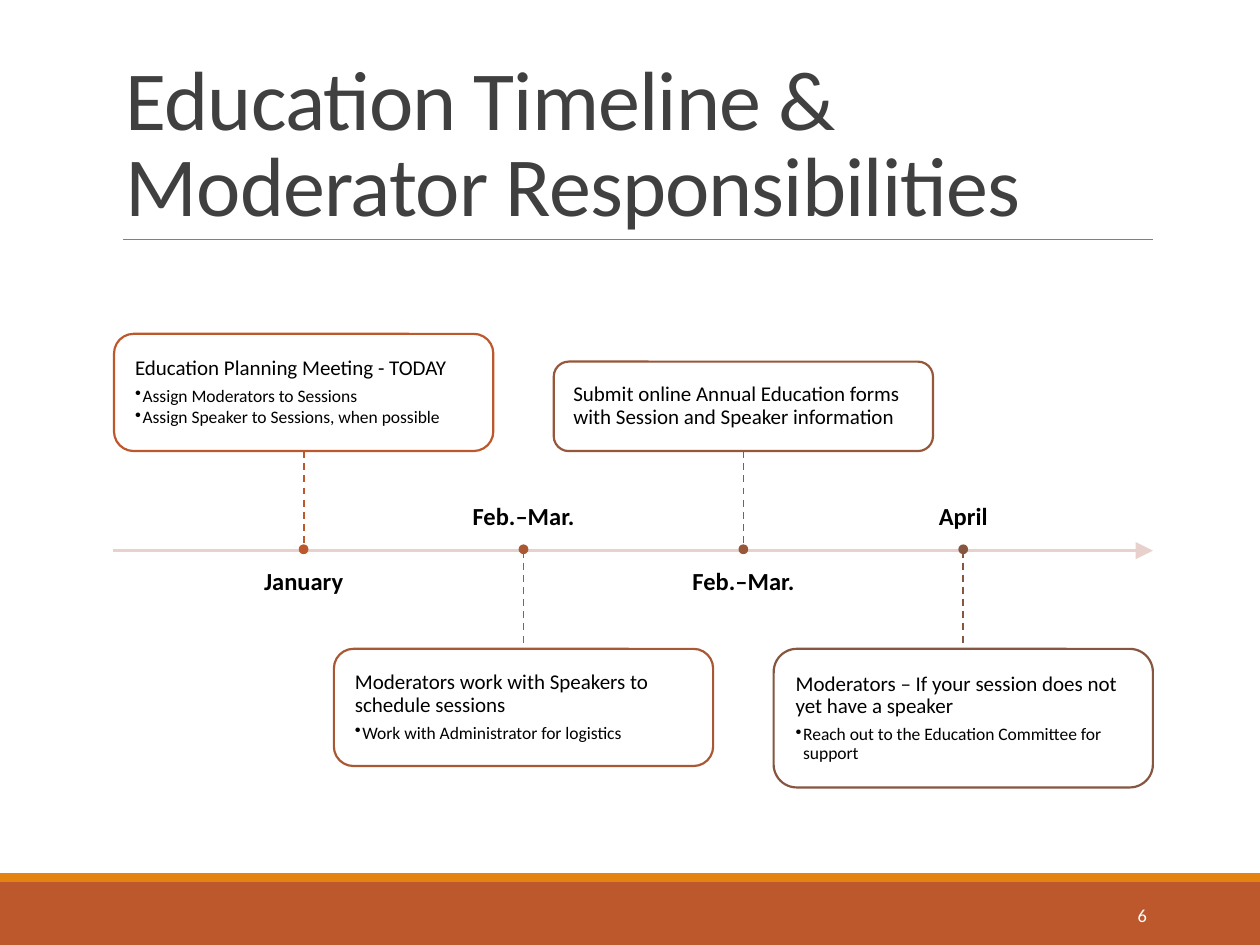
from lxml import etree
from pptx import Presentation
from pptx import util as u
from pptx.dml.color import RGBColor
from pptx.enum import dml, shapes, text
from pptx.oxml import ns

COLORS = {
    "ink": "000000", "title": "404040", "paper": "FFFFFF", "rule": "808080",
    "band": "BD582C", "stripe": "E48312", "axis": "E8D1CD",
    "january": "BD582C", "speakers": "AA5834", "forms": "97573A", "april": "865640",
}
AXIS_Y = 4.37
FIRST_X, STEP_X = 2.41, 1.745
BOX_W, LABEL_W, LABEL_H, DOT = 3.01, 2.65, 0.47, 0.06
MILESTONES = [
    ("January", "january", 2.65, 0.93, "Education Planning Meeting - TODAY",
     ["Assign Moderators to Sessions", "Assign Speaker to Sessions, when possible"]),
    ("Feb.–Mar.", "speakers", 5.15, 0.93, "Moderators work with Speakers to schedule sessions",
     ["Work with Administrator for logistics"]),
    ("Feb.–Mar.", "forms", 2.87, 0.71,
     "Submit online Annual Education forms with Session and Speaker information", []),
    ("April", "april", 5.15, 1.1, "Moderators – If your session does not yet have a speaker",
     ["Reach out to the Education Committee for support"]),
]


def rgb(name):
    """Return the named colour."""
    return RGBColor.from_string(COLORS[name])


def add_xml(parent, tag, **attrs):
    """Append a DrawingML element with the given attributes."""
    return etree.SubElement(parent, ns.qn(tag), attrs)


def set_alpha(sp, percent):
    """Set the opacity of every solid colour in the shape's own properties."""
    for clr in sp._element.spPr.findall("./" + ns.qn("a:solidFill") + "/*"):
        add_xml(clr, "a:alpha", val=str(percent * 1000))


def write(tf, content, size=12, color="ink", bold=False, align="LEFT", line=0.9,
          after=0.0, bullet=False, spacing=0):
    """Add one formatted paragraph to a text frame."""
    p = tf.paragraphs[0] if not tf.text else tf.add_paragraph()
    p.alignment = getattr(text.PP_ALIGN, align)
    p.line_spacing = line
    p.space_after = u.Pt(after)
    for i, part in enumerate(content.split("\n")):
        if i:
            p.add_line_break()
        r = p.add_run()
        r.text = part
        r.font.name, r.font.size, r.font.bold = "Calibri", u.Pt(size), bold
        r.font.color.rgb = rgb(color)
        if spacing:
            r._r.get_or_add_rPr().set("spc", str(spacing))
    if bullet:
        p.level = 1
        pPr = p._p.get_or_add_pPr()
        indent = u.Inches(0.06)
        pPr.set("marL", str(indent))
        pPr.set("indent", str(-indent))
        add_xml(pPr, "a:buChar", char="•")


class Deck:
    """Holds the presentation, its style and the current slide."""

    def __init__(self, width, height):
        self.prs = Presentation()
        self.prs.slide_width, self.prs.slide_height = u.Inches(width), u.Inches(height)
        self.line_width = 1.25
        self.s = self.prs.slides.add_slide(self.prs.slide_layouts[6])

    def shape(self, kind, left, top, width, height, fill, line=None):
        """Add a filled preset shape."""
        sp = self.s.shapes.add_shape(getattr(shapes.MSO_SHAPE, kind),
                                     *map(u.Inches, (left, top, width, height)))
        sp.shadow.inherit = False
        sp.fill.solid()
        sp.fill.fore_color.rgb = rgb(fill)
        if line:
            sp.line.color.rgb = rgb(line)
            sp.line.width = u.Pt(self.line_width)
        else:
            sp.line.fill.background()
        return sp

    def line(self, x1, y1, x2, y2, color, width, dashed=False, arrow=False):
        """Add a straight connector."""
        sp = self.s.shapes.add_connector(shapes.MSO_CONNECTOR.STRAIGHT,
                                         *map(u.Inches, (x1, y1, x2, y2)))
        sp.line.color.rgb = rgb(color)
        sp.line.width = u.Pt(width)
        if dashed:
            sp.line.dash_style = dml.MSO_LINE.DASH
        if arrow:
            add_xml(sp.line._get_or_add_ln(), "a:tailEnd", type="triangle", w="lg", len="lg")
        add_xml(sp._element.spPr, "a:effectLst")

    def textbox(self, left, top, width, height, anchor="TOP", inset=(0, 0)):
        """Add a wrapping text box and return its text frame."""
        sp = self.s.shapes.add_textbox(*map(u.Inches, (left, top, width, height)))
        tf = sp.text_frame
        tf.word_wrap = True
        tf.vertical_anchor = getattr(text.MSO_ANCHOR, anchor)
        tf.margin_left = tf.margin_right = u.Inches(inset[0])
        tf.margin_top = tf.margin_bottom = u.Inches(inset[1])
        return tf

    def milestone(self, x, label, color, top, height, heading, bullets):
        """Add a date label, a text box and its dashed link to the axis."""
        above = top < AXIS_Y
        tf = self.textbox(x - LABEL_W / 2, 4.52 if above else 3.74, LABEL_W, LABEL_H,
                          "TOP" if above else "BOTTOM")
        write(tf, label, size=14, bold=True, align="CENTER")

        left, pad = x - BOX_W / 2, 0.05 * height
        sp = self.shape("ROUNDED_RECTANGLE", left, top, BOX_W, height, "paper", color)
        set_alpha(sp, 90)
        tf = self.textbox(left + pad, top + pad, BOX_W - 2 * pad, height - 2 * pad,
                          "MIDDLE", (0.12, 0.12))
        write(tf, heading, after=4.2 if bullets else 0)
        for item in bullets:
            write(tf, item, size=10, after=1.5, bullet=True)

        self.line(x, top + height if above else AXIS_Y, x, AXIS_Y if above else top,
                  color, 1, dashed=True)
        self.shape("OVAL", x - DOT / 2, AXIS_Y - DOT / 2 - 0.01, DOT, DOT, color, color)


def main():
    """Build the timeline slide."""
    deck = Deck(10, 7.5)
    deck.shape("RECTANGLE", 0, 7, 10, 0.5, "band")
    deck.shape("RECTANGLE", 0, 6.93, 10, 0.07, "stripe")
    deck.line(0.98, 1.9, 9.15, 1.9, "rule", 0.5)
    tf = deck.textbox(0.9, 0.31, 8.25, 1.59, "BOTTOM", (0.1, 0.05))
    write(tf, "Education Timeline & \nModerator Responsibilities", size=48, color="title",
          line=0.85, spacing=-50)
    tf = deck.textbox(8.12, 7.06, 1.08, 0.4, "MIDDLE", (0.1, 0.05))
    write(tf, "6", size=10.5, color="paper", align="RIGHT", line=1.0, after=6)
    deck.line(0.9, AXIS_Y, 9.15, AXIS_Y, "axis", deck.line_width, arrow=True)
    for i, milestone in enumerate(MILESTONES):
        deck.milestone(FIRST_X + i * STEP_X, *milestone)
    deck.prs.save("out.pptx")


if __name__ == "__main__":
    main()
